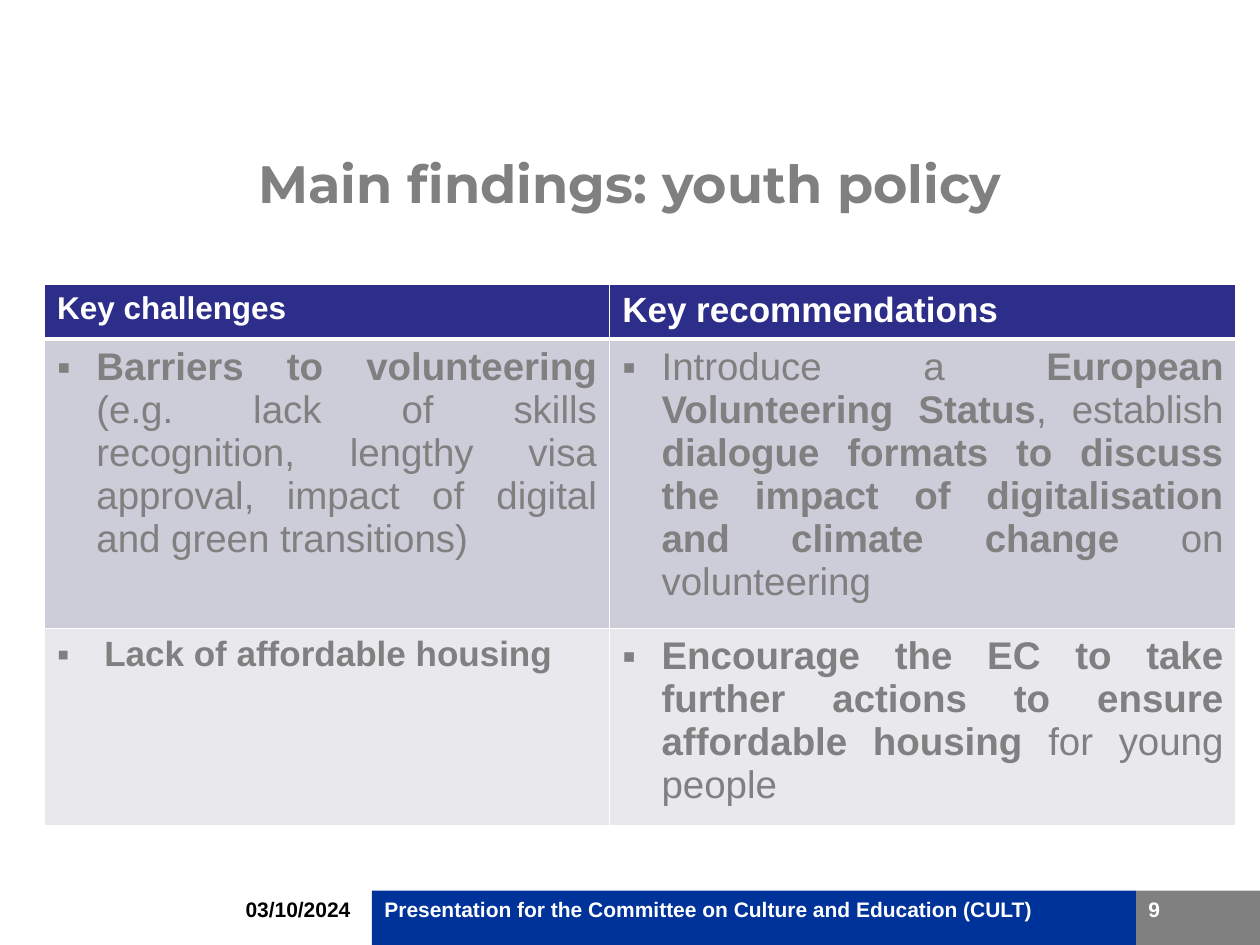
from lxml import etree
from pptx import Presentation
from pptx.dml.color import RGBColor
from pptx.enum.shapes import MSO_SHAPE
from pptx.enum.text import MSO_ANCHOR, PP_ALIGN
from pptx.oxml.ns import qn
from pptx.util import Pt

RECTANGLE = MSO_SHAPE.RECTANGLE
LEFT, CENTER, JUSTIFY = PP_ALIGN.LEFT, PP_ALIGN.CENTER, PP_ALIGN.JUSTIFY
TOP = MSO_ANCHOR.TOP
GREY, WHITE, BLACK = "808080", "FFFFFF", "000000"
NAVY, EU_BLUE = "2D2D8A", "003399"


def rgb(value):
    return RGBColor.from_string(value)


def set_text(paragraph, runs, size, color, align=LEFT, font="Arial"):
    """Fill a paragraph with (text, bold) runs."""
    for text, bold in runs:
        run = paragraph.add_run()
        run.text = text
        run.font.bold = bold
    paragraph.alignment = align
    paragraph.font.name = font
    paragraph.font.size = Pt(size)
    paragraph.font.color.rgb = rgb(color)


prs = Presentation()
prs.slide_width, prs.slide_height = Pt(720), Pt(540)
slide = prs.slides.add_slide(prs.slide_layouts[6])

# Title
title = slide.shapes.add_textbox(Pt(36), Pt(82.8), Pt(648), Pt(62.6)).text_frame
title.word_wrap = True
set_text(title.paragraphs[0], [("Main findings: youth policy", True)],
         30, GREY, CENTER, "Montserrat")

# Footer: date, event, page number
footer = [
    ("03/10/2024", 133.2, 212.6, None, BLACK),
    ("Presentation for the Committee on Culture and Education (CULT)",
     212.6, 649.2, EU_BLUE, WHITE),
    ("9", 649.2, 720, GREY, WHITE),
]
for text, left, right, fill, color in footer:
    place = Pt(left), Pt(509), Pt(right - left), Pt(31)
    if fill:
        part = slide.shapes.add_shape(RECTANGLE, *place)
        part.shadow.inherit = False
        part.fill.solid()
        part.fill.fore_color.rgb = rgb(fill)
        part.line.fill.background()
    else:
        part = slide.shapes.add_textbox(*place)
    part.text_frame.word_wrap = True
    part.text_frame.vertical_anchor = TOP
    set_text(part.text_frame.paragraphs[0], [(text, True)], 12, color)

# Findings: each cell holds its runs, text size and bullet indent
findings = [
    [([("Key challenges", True)], 18, 0),
     ([("Key recommendations", True)], 20, 0)],
    [([("Barriers to volunteering ", True),
       ("(e.g. lack of skills recognition, lengthy visa approval, "
        "impact of digital and green transitions)", False)], 22, 22.5),
     ([("Introduce a ", False),
       ("European Volunteering Status", True),
       (", establish ", False),
       ("dialogue formats to discuss the impact of digitalisation "
        "and climate change ", True),
       ("on volunteering", False)], 22, 22.5)],
    [([("Lack of affordable housing", True)], 20, 27),
     ([("Encourage the EC to take further actions to ensure "
        "affordable housing ", True),
       ("for young people", False)], 22, 22.5)],
]
row_fills = [NAVY, "CDCDDA", "E8E8ED"]
row_heights = [29, 154, 105]
column_widths = [323, 358]

table = slide.shapes.add_table(3, 2, Pt(25.4), Pt(162.4), Pt(sum(column_widths)),
                               Pt(sum(row_heights))).table
for column, width in zip(table.columns, column_widths):
    column.width = Pt(width)

for r, row in enumerate(findings):
    table.rows[r].height = Pt(row_heights[r])
    for c, (runs, size, indent) in enumerate(row):
        cell = table.cell(r, c)

        # White borders, thicker below the header
        cell_properties = cell._tc.get_or_add_tcPr()
        for side in ("L", "R", "T", "B"):
            thick = (r, side) in ((0, "B"), (1, "T"))
            border = etree.SubElement(cell_properties, qn(f"a:ln{side}"),
                                      w=str(Pt(3 if thick else 1)))
            border_fill = etree.SubElement(border, qn("a:solidFill"))
            etree.SubElement(border_fill, qn("a:srgbClr"), val=WHITE)
        cell.fill.solid()
        cell.fill.fore_color.rgb = rgb(row_fills[r])

        paragraph = cell.text_frame.paragraphs[0]
        if indent:
            bullet = paragraph._p.get_or_add_pPr()
            bullet.set("marL", str(Pt(indent)))
            bullet.set("indent", str(-Pt(indent)))
            etree.SubElement(bullet, qn("a:buFont"), typeface="Arial")
            etree.SubElement(bullet, qn("a:buChar"), char="▪")
        set_text(paragraph, runs, size, GREY if r else WHITE,
                 JUSTIFY if r else LEFT)

prs.save("out.pptx")
